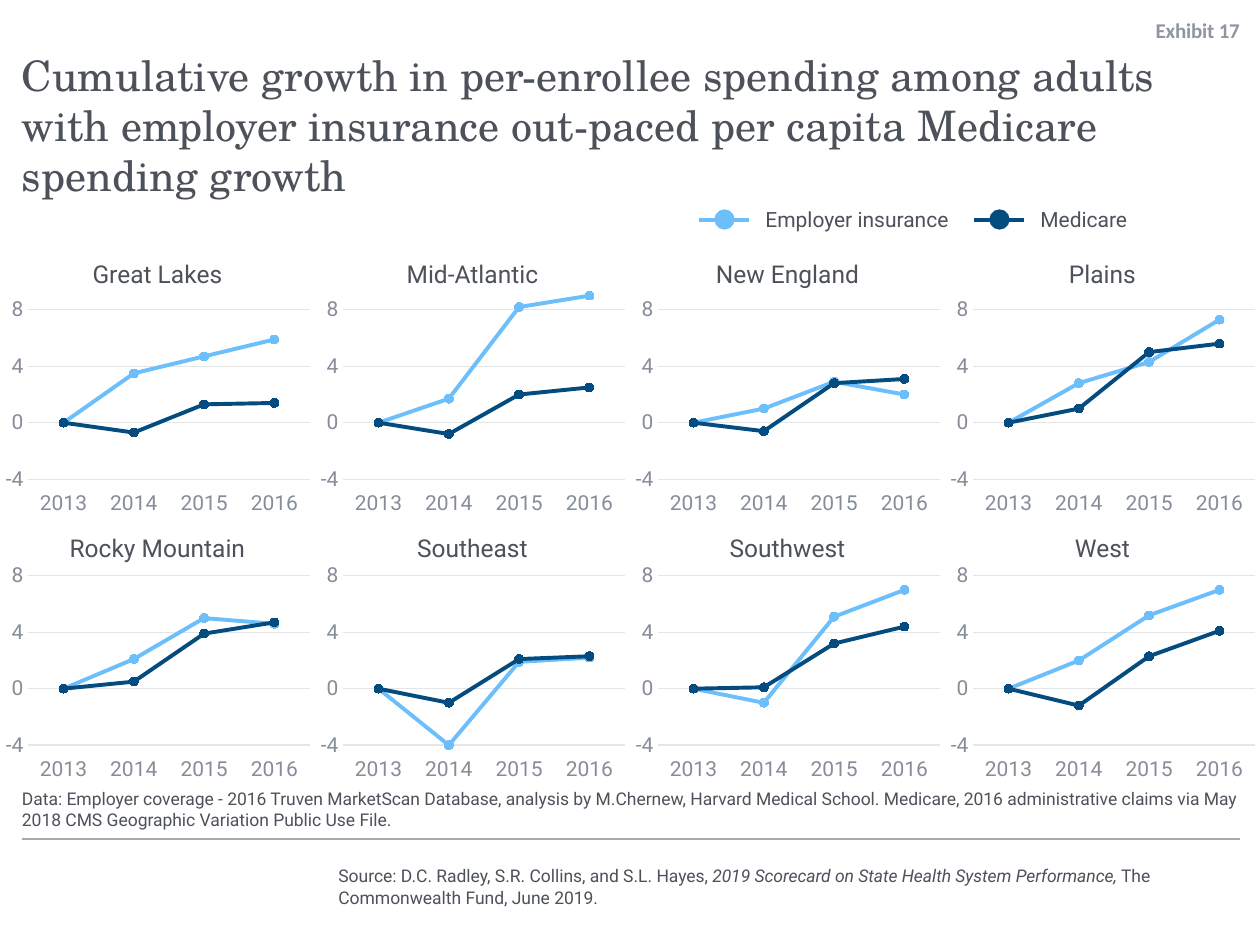
from dataclasses import dataclass

from lxml import etree
from pptx import Presentation
from pptx.chart.data import CategoryChartData as Data
from pptx.dml.color import RGBColor as Rgb
from pptx.enum.chart import XL_CHART_TYPE as Kind, XL_MARKER_STYLE as Mark
from pptx.enum.chart import XL_TICK_LABEL_POSITION as Spot, XL_TICK_MARK as Tick
from pptx.enum.shapes import MSO_CONNECTOR as Link, MSO_SHAPE as Form
from pptx.enum.text import MSO_ANCHOR as Anchor, MSO_AUTO_SIZE as Fit, PP_ALIGN as Align
from pptx.oxml import parse_xml
from pptx.oxml.ns import nsdecls, qn
from pptx.util import Emu, Inches, Pt


@dataclass(frozen=True)
class Theme:
    ink: str = "4C515A"
    axis: str = "868D99"
    tag: str = "8F95A1"
    grid: str = "E3E5E7"
    rule: str = "ABABAB"
    light: str = "6CBFFA"
    dark: str = "044C7F"
    sans: str = "Roboto"
    serif: str = "TeX Gyre Schola"
    mark: str = "Calibri"
    small: int = 10
    label: int = 12
    head: int = 14
    title: int = 24


T = Theme()
YEARS = ["2013", "2014", "2015", "2016"]
KEYS = [("Employer insurance", T.light), ("Medicare", T.dark)]
AREAS = [
    ("Great Lakes", (0, 3.5, 4.7, 5.9), (0, -0.7, 1.3, 1.4)),
    ("Mid-Atlantic", (0, 1.7, 8.2, 9), (0, -0.8, 2, 2.5)),
    ("New England", (0, 1, 2.9, 2), (0, -0.6, 2.8, 3.1)),
    ("Plains", (0, 2.8, 4.3, 7.3), (0, 1, 5, 5.6)),
    ("Rocky Mountain", (0, 2.1, 5, 4.6), (0, 0.5, 3.9, 4.7)),
    ("Southeast", (0, -4, 1.9, 2.2), (0, -1, 2.1, 2.3)),
    ("Southwest", (0, -1, 5.1, 7), (0, 0.1, 3.2, 4.4)),
    ("West", (0, 2, 5.2, 7), (0, -1.2, 2.3, 4.1)),
]


def px(*nums):
    return [Emu(round(n * 914400 / 126)) for n in nums]


def style(font, size, color, face=T.sans):
    font.size, font.name = Pt(size), face
    font.color.rgb = Rgb.from_string(color)


def write(shape, box, text, size=T.small, color=T.ink, face=T.sans, align=Align.LEFT,
          anchor=Anchor.TOP, inset=None, bold=False, space=None):
    """Place a shape and fill it; text marked with * is italic."""
    shape.left, shape.top, shape.width, shape.height = px(*box)
    frame = shape.text_frame
    frame.word_wrap, frame.auto_size = True, Fit.NONE
    frame.vertical_anchor = anchor
    if inset is not None:
        frame.margin_left = frame.margin_right = inset
        frame.margin_top = frame.margin_bottom = inset
    para = frame.paragraphs[0]
    para.alignment, para.space_before = align, Pt(0)
    if shape.is_placeholder:
        props = para._p.get_or_add_pPr()
        props.set("marL", "0")
        props.set("indent", "0")
        etree.SubElement(props, qn("a:buNone"))
    for i, part in enumerate(text.split("*")):
        run = para.add_run()
        run.text = part
        style(run.font, size, color, face)
        run.font.bold, run.font.italic = bold, i % 2 == 1
        if space is not None:
            run._r.get_or_add_rPr().set("spc", str(space))


def label(slide, box, text, **form):
    write(slide.shapes.add_textbox(*px(*box)), box, text, **form)


def stroke(shapes, x1, x2, y, color, width):
    line = shapes.add_connector(Link.STRAIGHT, *px(x1, y, x2, y))
    line.line.color.rgb, line.line.width = Rgb.from_string(color), Pt(width)
    etree.SubElement(line._element.spPr, qn("a:effectLst"))


def header(slide, x, y, w):
    title, _, tag = slide.placeholders
    write(title, (x, y + 40, w, 131),
          "Cumulative growth in per-enrollee spending among adults with employer "
          "insurance out-paced per capita Medicare spending growth",
          size=T.title, face=T.serif, inset=0)
    write(tag, (x + w - 236, y, 236, 42), "Exhibit 17", size=T.label, color=T.tag,
          face=T.mark, align=Align.RIGHT, anchor=Anchor.MIDDLE, inset=0, bold=True, space=-10)


def legend(slide, x, y, step):
    for i, (name, color) in enumerate(KEYS):
        left = x + i * step
        group = slide.shapes.add_group_shape().shapes
        stroke(group, left, left + 50, y + 20, color, 2.5)
        dot = group.add_shape(Form.OVAL, *px(left + 16, y + 10, 19, 19))
        dot.shadow.inherit = False
        dot.fill.solid()
        dot.fill.fore_color.rgb = dot.line.color.rgb = Rgb.from_string(color)
        dot.line.width = Pt(0.75)
        label(slide, (left + 54, y, 212, 38), name, size=T.label)


def graph(slide, box, rows):
    data = Data()
    data.categories = YEARS
    for (name, _), vals in zip(KEYS, rows):
        data.add_series(name, vals)
    chart = slide.shapes.add_chart(Kind.LINE_MARKERS, *px(*box), data).chart
    chart.has_legend = chart.has_title = False
    style(chart.font, T.small, T.ink)

    # Axes
    cat, val = chart.category_axis, chart.value_axis
    for axis in (cat, val):
        axis.major_tick_mark = axis.minor_tick_mark = Tick.NONE
        style(axis.tick_labels.font, T.label, T.axis)
    cat.tick_label_position = Spot.LOW
    val.minimum_scale, val.maximum_scale, val.major_unit = -4, 10, 4
    val.format.line.fill.background()
    val.has_major_gridlines = True
    for line in (cat.format.line, val.major_gridlines.format.line):
        line.color.rgb, line.width = Rgb.from_string(T.grid), Pt(0.75)

    # Series
    plot = chart.plots[0]
    plot.vary_by_categories = False
    for line, (_, color) in zip(plot.series, KEYS):
        shade = Rgb.from_string(color)
        line.smooth = False
        line.format.line.color.rgb, line.format.line.width = shade, Pt(2.25)
        mark = line.marker
        mark.style, mark.size = Mark.CIRCLE, 5
        mark.format.fill.solid()
        mark.format.fill.fore_color.rgb = mark.format.line.color.rgb = shade

    # Fixed inner plot area, so that all panels line up
    area = chart._chartSpace.chart.plotArea
    for old in area.findall(qn("c:layout")):
        area.remove(old)
    sizes = {"x": 0.09, "y": 0.02, "w": 0.89, "h": 0.84}
    parts = "".join(f'<c:{k} val="{v}"/>' for k, v in sizes.items())
    area.insert(0, parse_xml(
        f'<c:layout {nsdecls("c")}><c:manualLayout><c:layoutTarget val="inner"/>'
        f'<c:xMode val="edge"/><c:yMode val="edge"/>{parts}</c:manualLayout></c:layout>'))


def panel(slide, x, y, gap, name, *rows):
    graph(slide, (x, y + gap, 316, 239), rows)
    label(slide, (x + 44, y, 227, 43), name, size=T.head, align=Align.CENTER)


def footer(slide, x, y, w):
    write(slide.placeholders[1], (x, y, w, 63),
          "Data: Employer coverage - 2016 Truven MarketScan Database, analysis by "
          "M.Chernew, Harvard Medical School. Medicare, 2016 administrative claims via "
          "May 2018 CMS Geographic Variation Public Use File.",
          anchor=Anchor.BOTTOM, inset=0)
    stroke(slide.shapes, x, x + w, y + 72, T.rule, 0.75)
    label(slide, (x + w - 914, y + 92, 914, 55),
          "Source: D.C. Radley, S.R. Collins, and S.L. Hayes, *2019 Scorecard on State "
          "Health System Performance, *The Commonwealth Fund, June 2019.",
          anchor=Anchor.MIDDLE)


def main():
    deck = Presentation()
    deck.slide_width, deck.slide_height = Inches(10), Inches(7.5)
    slide = deck.slides.add_slide(deck.slide_layouts[3])
    header(slide, 22, 9, 1218)
    legend(slide, 699, 200, 275)
    bands = [(253, 24), (527, 16)]  # top of each row, drop from name to chart
    for i, area in enumerate(AREAS):
        row, col = divmod(i, 4)
        panel(slide, col * 315, *bands[row], *area)
    footer(slide, 22, 767, 1218)
    deck.save("out.pptx")


if __name__ == "__main__":
    main()
